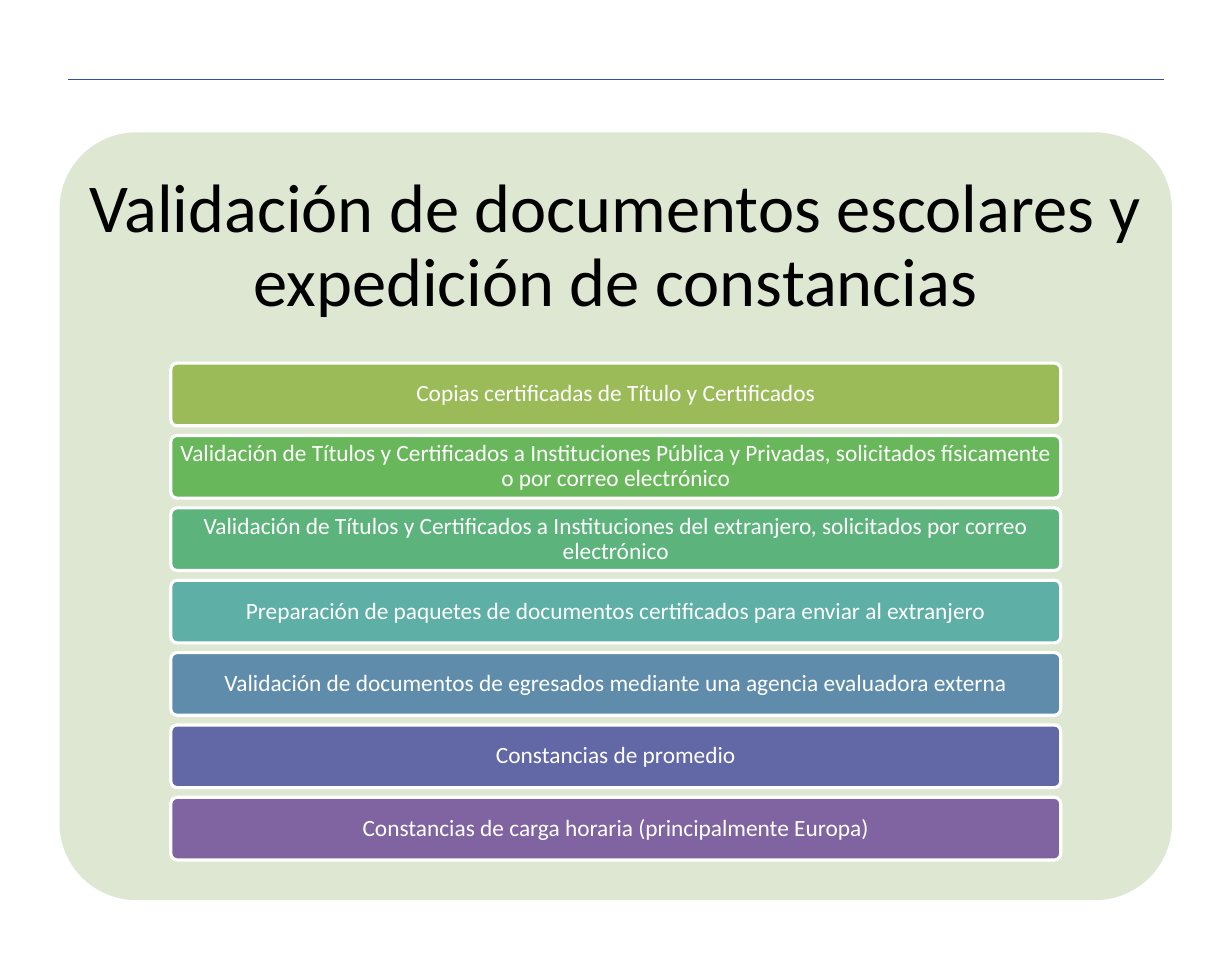
import pptx
import pptx.util
import pptx.dml.color
import pptx.enum.shapes
import pptx.enum.text
import pptx.oxml

Cm = pptx.util.Cm
Pt = pptx.util.Pt

COLORS = {"rule": "364F9D", "panel": "DEE7D1", "title": "000000", "white": "FFFFFF"}
TITLE = "Validación de documentos escolares y expedición de constancias"
SERVICES = [
    ("Copias certificadas de Título y Certificados", "9BBB59"),
    ("Validación de Títulos y Certificados a Instituciones Pública y Privadas, "
     "solicitados físicamente o por correo electrónico", "69B75B"),
    ("Validación de Títulos y Certificados a Instituciones del extranjero, "
     "solicitados por correo electrónico", "5CB37C"),
    ("Preparación de paquetes de documentos certificados para enviar al extranjero", "5EAFA6"),
    ("Validación de documentos de egresados mediante una agencia evaluadora externa", "608CAB"),
    ("Constancias de promedio", "6267A6"),
    ("Constancias de carga horaria (principalmente Europa)", "8064A2"),
]
FONT = "Calibri"
PANEL_LEFT, PANEL_TOP, PANEL_WIDTH, PANEL_HEIGHT = 1.35, 3, 25.2, 17.4
TITLE_HEIGHT = 5.23
BAR_LEFT, BAR_TOP, BAR_WIDTH, BAR_HEIGHT, BAR_PITCH = 3.87, 8.23, 20.16, 1.42, 1.64


def rgb(value):
    return pptx.dml.color.RGBColor.from_string(value)


def add_rounded(slide, left, top, width, height, fill):
    shape = slide.shapes.add_shape(
        pptx.enum.shapes.MSO_SHAPE.ROUNDED_RECTANGLE, Cm(left), Cm(top), Cm(width), Cm(height))
    shape.adjustments[0] = 0.1
    shape.shadow.inherit = False
    shape.fill.solid()
    shape.fill.fore_color.rgb = rgb(fill)
    shape.line.fill.background()
    return shape


def write_text(shape, text, size, color, side, edge):
    frame = shape.text_frame
    frame.text = text
    frame.word_wrap = True
    frame.auto_size = pptx.enum.text.MSO_AUTO_SIZE.NONE
    frame.vertical_anchor = pptx.enum.text.MSO_ANCHOR.MIDDLE
    frame.margin_left = frame.margin_right = Cm(side)
    frame.margin_top = frame.margin_bottom = Cm(edge)
    paragraph = frame.paragraphs[0]
    paragraph.alignment = pptx.enum.text.PP_ALIGN.CENTER
    paragraph.line_spacing = 0.9
    paragraph.font.name = FONT
    paragraph.font.size = Pt(size)
    paragraph.font.color.rgb = rgb(color)


def main():
    presentation = pptx.Presentation()
    presentation.slide_width = Cm(27.91)
    presentation.slide_height = Cm(21.62)
    slide = presentation.slides.add_slide(presentation.slide_layouts[5])

    rule = slide.shapes.add_connector(
        pptx.enum.shapes.MSO_CONNECTOR.STRAIGHT, Cm(1.55), Cm(1.8), Cm(26.37), Cm(1.8))
    rule.line.color.rgb = rgb(COLORS["rule"])
    rule.line.width = Pt(0.75)
    rule.element.spPr.append(pptx.oxml.parse_xml(
        '<a:effectLst xmlns:a="http://schemas.openxmlformats.org/drawingml/2006/main"/>'))

    panel = add_rounded(slide, PANEL_LEFT, PANEL_TOP, PANEL_WIDTH, PANEL_HEIGHT, COLORS["panel"])

    title = slide.shapes.title
    title.left, title.top = Cm(PANEL_LEFT), Cm(PANEL_TOP)
    title.width, title.height = Cm(PANEL_WIDTH), Cm(TITLE_HEIGHT)
    write_text(title, TITLE, 44, COLORS["title"], 0.46, 0.46)
    panel.element.addnext(title.element)

    for index, (service, fill) in enumerate(SERVICES):
        bar = add_rounded(
            slide, BAR_LEFT, BAR_TOP + index * BAR_PITCH, BAR_WIDTH, BAR_HEIGHT, fill)
        bar.line.color.rgb = rgb(COLORS["white"])
        bar.line.width = Pt(2)
        write_text(bar, service, 15, COLORS["white"], 0.1, 0.11)

    presentation.save("out.pptx")


if __name__ == "__main__":
    main()
